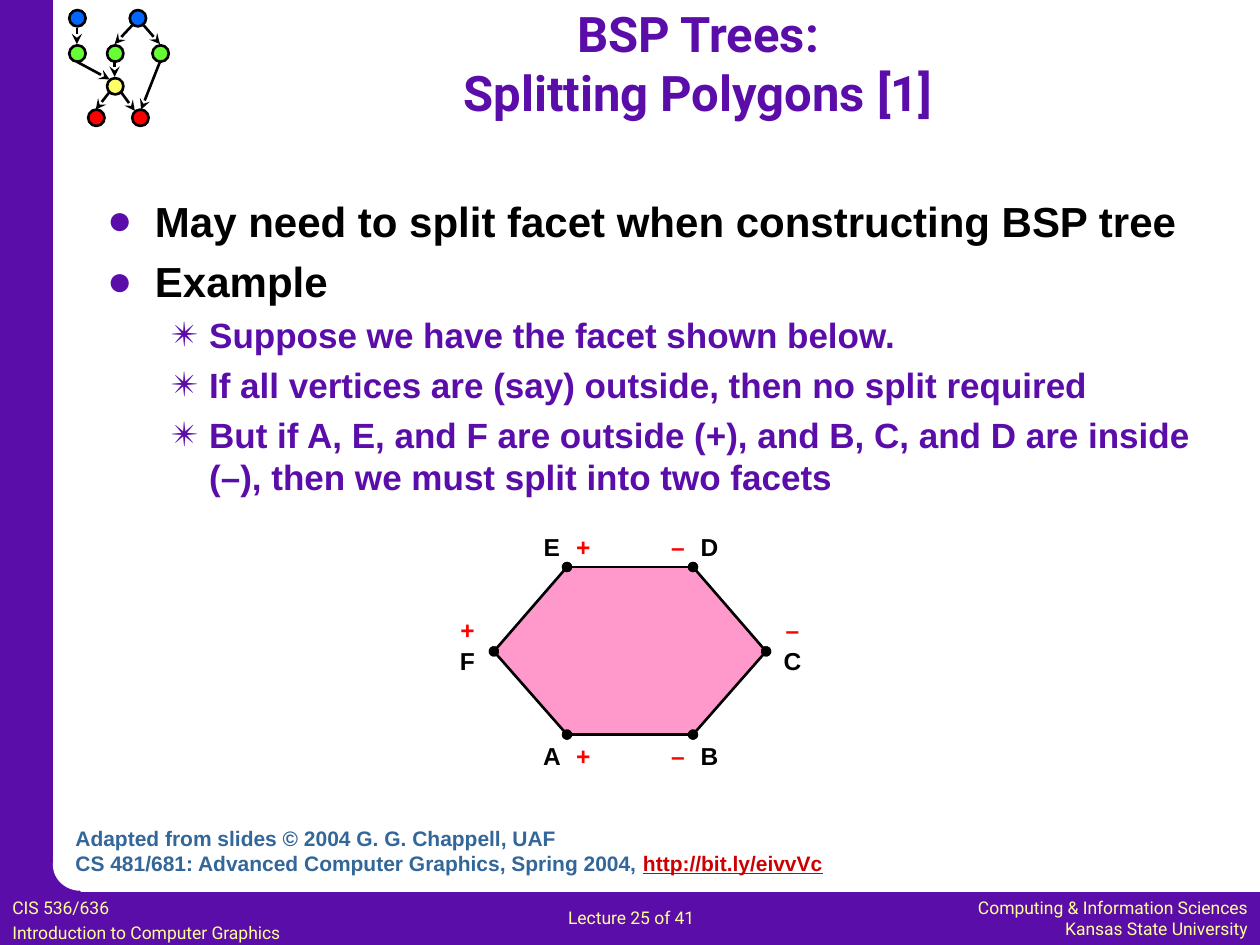
from typing import NamedTuple

from lxml.etree import SubElement
from pptx import Presentation
from pptx.dml.color import RGBColor
from pptx.enum.shapes import MSO_CONNECTOR, MSO_SHAPE
from pptx.enum.text import MSO_ANCHOR, MSO_AUTO_SIZE, PP_ALIGN
from pptx.oxml.ns import qn
from pptx.util import Inches, Pt

PURPLE = RGBColor(0x5B, 0x0D, 0xAA)
WHITE = RGBColor(0xFF, 0xFF, 0xFF)
BLACK = RGBColor(0x00, 0x00, 0x00)
RED = RGBColor(0xFF, 0x00, 0x00)
LINK_RED = RGBColor(0xCC, 0x00, 0x00)
CREDIT_BLUE = RGBColor(0x33, 0x66, 0x99)
PALE_YELLOW = RGBColor(0xFF, 0xFF, 0x99)
YELLOW = RGBColor(0xFF, 0xFF, 0x66)
GREEN = RGBColor(0x66, 0xFF, 0x33)
BLUE = RGBColor(0x00, 0x66, 0xFF)
PINK = RGBColor(0xFF, 0x99, 0xCC)

TITLE = {"name": "Roboto", "size": Pt(28), "bold": True, "color": PURPLE}
POINT = {"name": "Arial", "size": Pt(24), "bold": True, "color": BLACK}
SUBPOINT = POINT | {"size": Pt(20), "color": PURPLE}
LABEL = POINT | {"size": Pt(14)}
SIGN = LABEL | {"color": RED}
CREDIT = POINT | {"size": Pt(12), "color": CREDIT_BLUE}
LINK = CREDIT | {"color": LINK_RED, "underline": True}
FOOTER = {"name": "Roboto", "size": Pt(10), "color": PALE_YELLOW}


class Area(NamedTuple):
    left: float
    top: float
    width: float
    height: float


class Point(NamedTuple):
    x: float
    y: float


class Node(NamedTuple):
    left: float
    top: float
    color: RGBColor


class Edge(NamedTuple):
    start: Point
    end: Point


class Vertex(NamedTuple):
    point: Point
    name: str
    sign: str
    name_at: Point
    sign_at: Point


class Footer(NamedTuple):
    area: Area
    lines: list
    align: PP_ALIGN = PP_ALIGN.LEFT
    gap: float = 0


class Bullet(NamedTuple):
    text: str
    level: int = 0


class BulletStyle(NamedTuple):
    mark: str
    indent: float
    hanging: float
    gap: float
    font: dict


BULLET_STYLES = [BulletStyle("●", 0.38, 0.38, 5.5, POINT),
                 BulletStyle("✴", 0.81, 0.31, 4.6, SUBPOINT)]
BULLETS = [
    Bullet("May need to split facet when constructing BSP tree"),
    Bullet("Example"),
    Bullet("Suppose we have the facet shown below.", 1),
    Bullet("If all vertices are (say) outside, then no split required", 1),
    Bullet("But if A, E, and F are outside (+), and B, C, and D are inside "
           "(–), then we must split into two facets", 1),
]
NODE_SIZE = 0.13
NODES = [Node(0.55, 0.36, GREEN), Node(0.55, 0.08, BLUE),
         Node(0.85, 0.36, GREEN), Node(1.03, 0.08, BLUE),
         Node(1.21, 0.36, GREEN), Node(0.85, 0.62, YELLOW),
         Node(0.7, 0.87, RED), Node(1.05, 0.87, RED)]
EDGES = [Edge(Point(0.61, 0.22), Point(0.61, 0.35)),
         Edge(Point(1.05, 0.2), Point(0.91, 0.35)),
         Edge(Point(1.14, 0.2), Point(1.27, 0.35)),
         Edge(Point(0.61, 0.49), Point(0.87, 0.63)),
         Edge(Point(0.91, 0.49), Point(0.91, 0.61)),
         Edge(Point(1.27, 0.49), Point(1.12, 0.87)),
         Edge(Point(0.96, 0.73), Point(1.07, 0.88)),
         Edge(Point(0.87, 0.73), Point(0.76, 0.87))]
VERTICES = [
    Vertex(Point(4.5, 5.83), "A", "+", Point(4.17, 5.83), Point(4.42, 5.83)),
    Vertex(Point(5.5, 5.83), "B", "–", Point(5.42, 5.83), Point(5.17, 5.83)),
    Vertex(Point(6.08, 5.17), "C", "–", Point(6.08, 5.08), Point(6.08, 4.83)),
    Vertex(Point(5.5, 4.5), "D", "–", Point(5.42, 4.17), Point(5.17, 4.17)),
    Vertex(Point(4.5, 4.5), "E", "+", Point(4.17, 4.17), Point(4.42, 4.17)),
    Vertex(Point(3.92, 5.17), "F", "+", Point(3.5, 5.08), Point(3.5, 4.83)),
]
FOOTERS = [
    Footer(Area(7.18, 7.07, 2.82, 0.43),
           ["Computing & Information Sciences", "Kansas State University"],
           PP_ALIGN.RIGHT),
    Footer(Area(0, 7.07, 2.95, 0.44),
           ["CIS 536/636", "Introduction to Computer Graphics"], gap=2.3),
    Footer(Area(4.41, 7.15, 1.52, 0.27), ["Lecture 25 of 41"]),
]


def add_span(para, text: str, style: dict) -> None:
    span = para.add_run()
    span.text = text
    for key, value in style.items():
        if key == "color":
            span.font.color.rgb = value
        else:
            setattr(span.font, key, value)


def fill_lines(frame, lines: list, align: PP_ALIGN, gap: float = 0) -> None:
    """Each line is a list of (text, style) pairs."""
    for index, line in enumerate(lines):
        para = frame.add_paragraph() if index else frame.paragraphs[0]
        para.alignment = align
        para.space_before = Pt(gap if index else 0)
        for text, style in line:
            add_span(para, text, style)


def add_text(page, area: Area, lines: list, align=PP_ALIGN.LEFT,
             gap: float = 0, wrap: bool = False) -> None:
    box = page.shapes.add_textbox(*map(Inches, area))
    box.text_frame.word_wrap = wrap
    fill_lines(box.text_frame, lines, align, gap)


def add_block(page, kind: MSO_SHAPE, area: Area, color: RGBColor,
              outline: float = 0) -> None:
    shape = page.shapes.add_shape(kind, *map(Inches, area))
    paint(shape, color, outline)


def paint(shape, color: RGBColor, outline: float) -> None:
    shape.shadow.inherit = False
    shape.fill.solid()
    shape.fill.fore_color.rgb = color
    if outline:
        shape.line.color.rgb = BLACK
        shape.line.width = Pt(outline)
    else:
        shape.line.fill.background()


def add_line(page, edge: Edge, ends: dict) -> None:
    line = page.shapes.add_connector(
        MSO_CONNECTOR.STRAIGHT, *map(Inches, edge.start + edge.end))
    line.line.color.rgb = BLACK
    line.line.width = Pt(1.5)
    for tag, kind in ends.items():
        SubElement(line.line._get_or_add_ln(), qn(tag), type=kind)
    SubElement(line._element.spPr, qn("a:effectLst"))


def place(holder, area: Area, anchor: MSO_ANCHOR):
    holder.left, holder.top, holder.width, holder.height = map(Inches, area)
    frame = holder.text_frame
    frame.auto_size = MSO_AUTO_SIZE.NONE
    frame.vertical_anchor = anchor
    return frame


def fill_bullets(frame) -> None:
    for index, bullet in enumerate(BULLETS):
        style = BULLET_STYLES[bullet.level]
        para = frame.add_paragraph() if index else frame.paragraphs[0]
        para.level = bullet.level
        para.space_before = Pt(style.gap if index else 0)
        props = para._p.get_or_add_pPr()
        props.set("marL", str(Inches(style.indent)))
        props.set("indent", str(-Inches(style.hanging)))
        SubElement(SubElement(props, qn("a:buClr")), qn("a:srgbClr"), val=str(PURPLE))
        SubElement(props, qn("a:buFont"), typeface="Arial")
        SubElement(props, qn("a:buChar"), char=style.mark)
        add_span(para, bullet.text, style.font)


def main() -> None:
    deck = Presentation()
    deck.slide_width, deck.slide_height = Inches(10), Inches(7.5)
    page = deck.slides.add_slide(deck.slide_layouts[1])

    # Purple frame with a rounded inner corner
    add_block(page, MSO_SHAPE.RECTANGLE, Area(0, 7.08, 10, 0.42), PURPLE)
    add_block(page, MSO_SHAPE.RECTANGLE, Area(0, 0, 0.42, 7.5), PURPLE)
    add_block(page, MSO_SHAPE.RECTANGLE, Area(0.2, 6.85, 0.44, 0.44), PURPLE)
    add_block(page, MSO_SHAPE.OVAL, Area(0.42, 6.66, 0.44, 0.41), WHITE)
    for footer in FOOTERS:
        add_text(page, footer.area, [[(text, FOOTER)] for text in footer.lines],
                 footer.align, footer.gap)

    # Small graph in the corner
    for node in NODES:
        add_block(page, MSO_SHAPE.OVAL,
                  Area(node.left, node.top, NODE_SIZE, NODE_SIZE), node.color, 1.5)
    for edge in EDGES:
        add_line(page, edge, {"a:tailEnd": "stealth"})

    # Title and bullets
    title = place(page.shapes.title, Area(1.25, 0.08, 8.58, 0.83), MSO_ANCHOR.MIDDLE)
    fill_lines(title, [[("BSP Trees:", TITLE)], [("Splitting Polygons [1]", TITLE)]],
               PP_ALIGN.CENTER)
    fill_bullets(place(page.placeholders[1], Area(0.75, 1.5, 8.83, 5.17), MSO_ANCHOR.TOP))

    # Facet with its edges, vertex names and signs
    corners = [tuple(map(Inches, vertex.point)) for vertex in VERTICES]
    outline = page.shapes.build_freeform(*corners[0])
    outline.add_line_segments(corners[1:], close=True)
    paint(outline.convert_to_shape(), PINK, 0.75)
    for vertex, following in zip(VERTICES, VERTICES[1:] + VERTICES[:1]):
        add_line(page, Edge(vertex.point, following.point),
                 {"a:headEnd": "oval", "a:tailEnd": "oval"})
        for text, at, style in ((vertex.name, vertex.name_at, LABEL),
                                (vertex.sign, vertex.sign_at, SIGN)):
            add_text(page, Area(*at, 0.42, 0.33), [[(text, style)]],
                     PP_ALIGN.CENTER, wrap=True)

    # Credit
    add_text(page, Area(0.5, 6.5, 6.19, 0.5), [
        [("Adapted from slides © 2004 G. G. Chappell, UAF", CREDIT)],
        [("CS 481/681: Advanced Computer Graphics, Spring 2004, ", CREDIT),
         ("http://bit.ly/eivvVc", LINK)]])

    deck.save("out.pptx")


if __name__ == "__main__":
    main()
